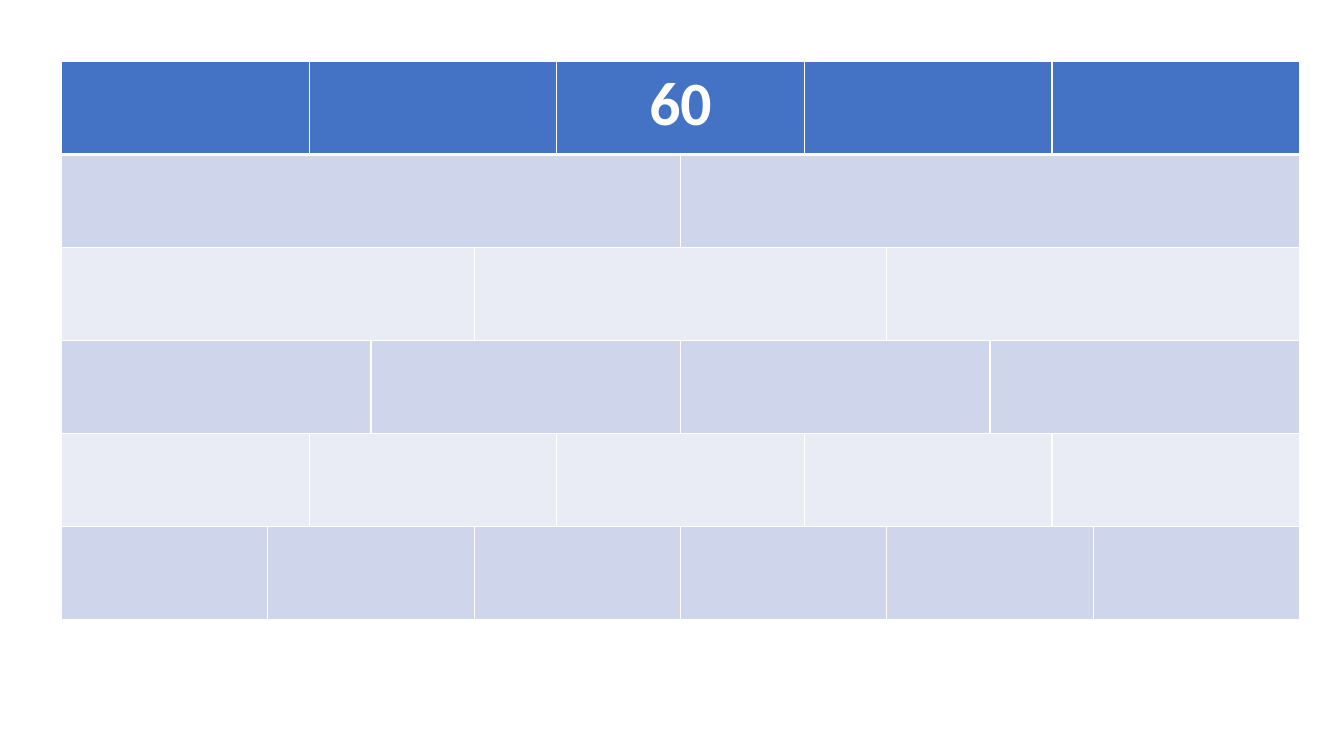
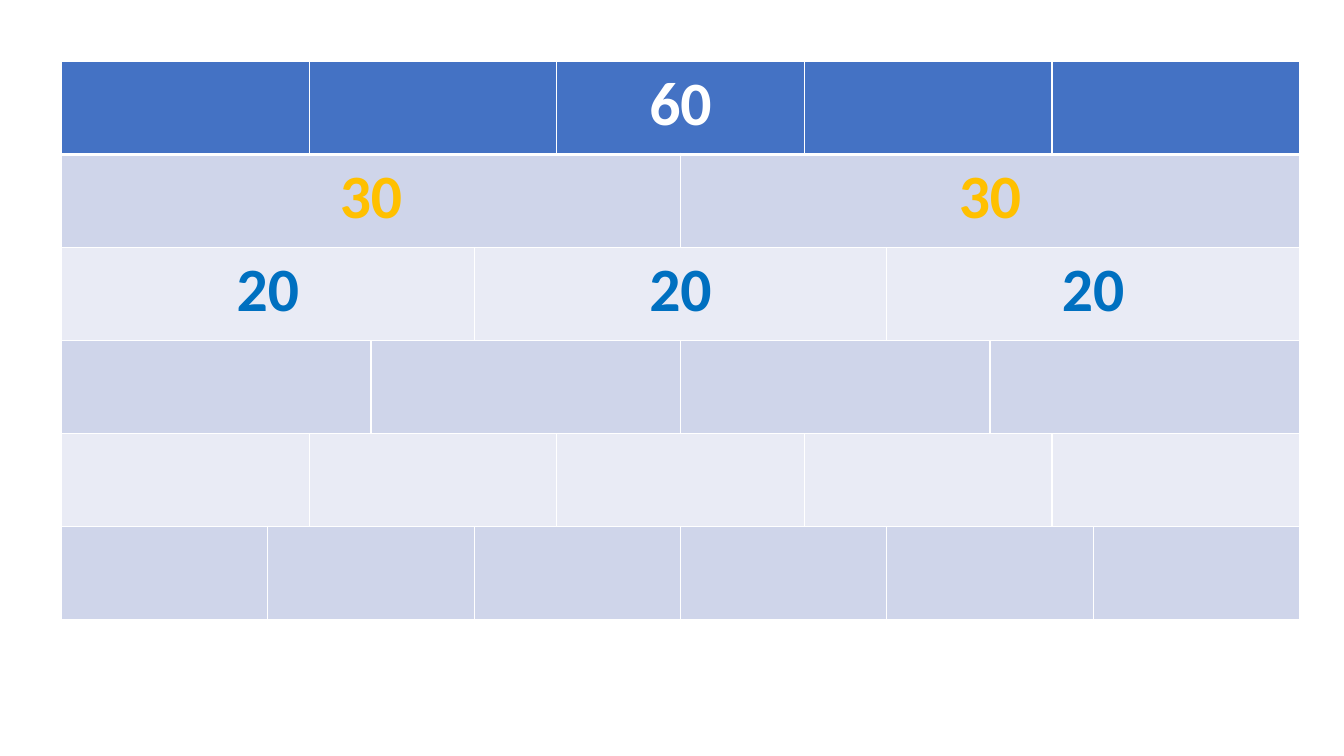
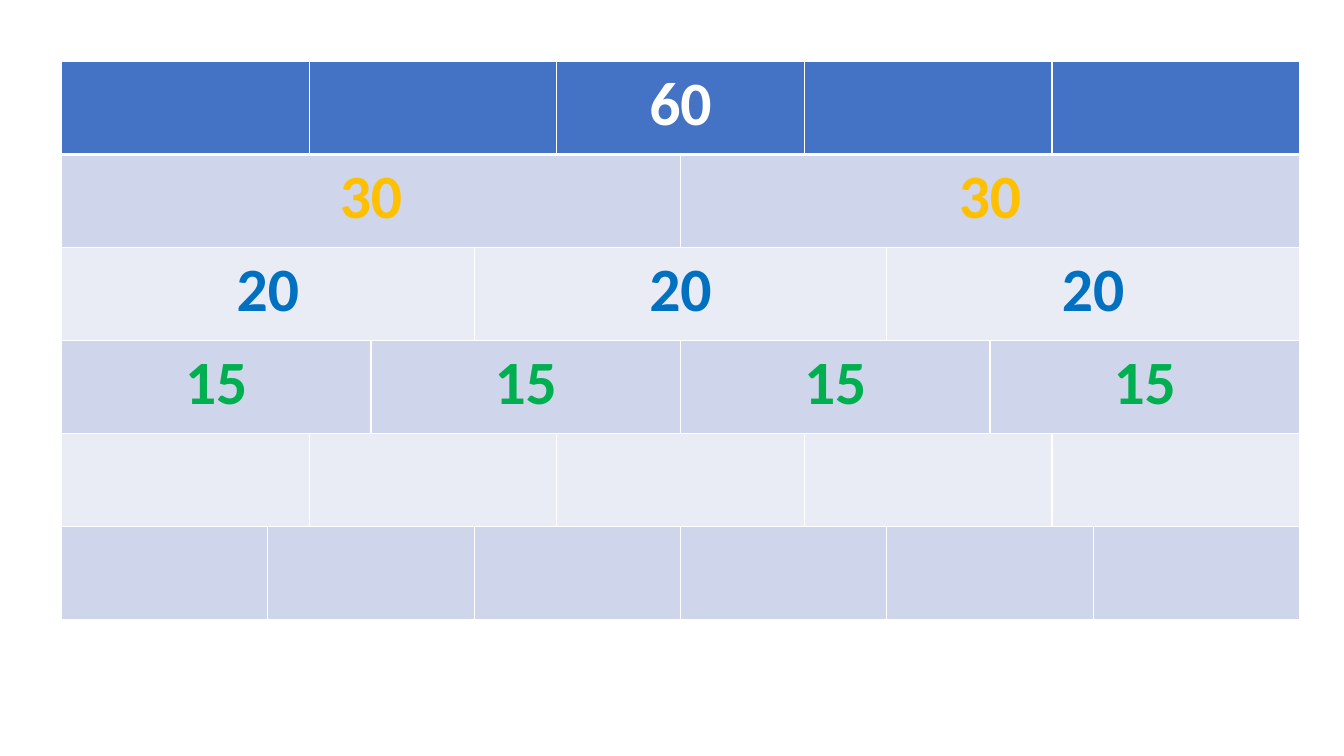
import dataclasses

import lxml.etree
import pptx
import pptx.dml.color
import pptx.enum.text
import pptx.oxml.ns
import pptx.slide
import pptx.table
import pptx.util

Cm = pptx.util.Cm
Pt = pptx.util.Pt
RGBColor = pptx.dml.color.RGBColor

WHITE = RGBColor(0xFF, 0xFF, 0xFF)
HEADER_BLUE = RGBColor(0x44, 0x72, 0xC4)
BAND_DARK = RGBColor(0xCF, 0xD5, 0xEA)
BAND_LIGHT = RGBColor(0xE9, 0xEB, 0xF5)
GOLD = RGBColor(0xFF, 0xC0, 0x00)
BLUE = RGBColor(0x00, 0x70, 0xC0)
GREEN = RGBColor(0x00, 0xB0, 0x50)

FONT_NAME = "Calibri"
FONT_SIZE = Pt(44)
TOTAL = 60
UNIT_WIDTH = Cm(0.52)
MARGIN = Cm(1.55)
TABLE_HEIGHT = Cm(14.07)
HEADER_BORDERS = {"lnL": Pt(1), "lnR": Pt(1), "lnT": Pt(1), "lnB": Pt(3)}


@dataclasses.dataclass(frozen=True)
class WallRow:
    """One row of the wall, cut into equal bricks."""

    labels: tuple[str, ...]
    fill: RGBColor
    text_color: RGBColor = WHITE

    def edges(self) -> list[int]:
        parts = len(self.labels)
        return [TOTAL * index // parts for index in range(parts + 1)]


HEADER = WallRow(("", "", "60", "", ""), HEADER_BLUE)
BODY_ROWS = (
    WallRow(("30",) * 2, BAND_DARK, GOLD),
    WallRow(("20",) * 3, BAND_LIGHT, BLUE),
    WallRow(("15",) * 4, BAND_DARK, GREEN),
    WallRow(("",) * 5, BAND_LIGHT),
    WallRow(("",) * 6, BAND_DARK),
)
LABELLED_ROWS_PER_SLIDE = (0, 2, 3)


def add_border(cell: pptx.table._Cell, side: str, width: int) -> None:
    properties = cell._tc.get_or_add_tcPr()
    qn = pptx.oxml.ns.qn
    line = lxml.etree.SubElement(properties, qn(f"a:{side}"), w=str(width))
    solid_fill = lxml.etree.SubElement(line, qn("a:solidFill"))
    lxml.etree.SubElement(solid_fill, qn("a:srgbClr"), val=str(WHITE))


def write_label(cell: pptx.table._Cell, label: str, color: RGBColor) -> None:
    paragraph = cell.text_frame.paragraphs[0]
    paragraph.text = label
    paragraph.alignment = pptx.enum.text.PP_ALIGN.CENTER
    for run in paragraph.runs:
        run.font.name = FONT_NAME
        run.font.size = FONT_SIZE
        run.font.bold = True
        run.font.color.rgb = color


def add_wall(slide: pptx.slide.Slide, labelled_rows: int) -> None:
    """Draw the wall with labels in the header and the first body rows."""
    rows = (HEADER, *BODY_ROWS)
    edges = sorted({edge for row in rows for edge in row.edges()})
    table = slide.shapes.add_table(
        len(rows), len(edges) - 1, MARGIN, MARGIN, TOTAL * UNIT_WIDTH, TABLE_HEIGHT
    ).table
    for column, start, end in zip(table.columns, edges, edges[1:]):
        column.width = (end - start) * UNIT_WIDTH

    for row_index, row in enumerate(rows):
        columns = [edges.index(edge) for edge in row.edges()]
        for label, first, after in zip(row.labels, columns, columns[1:]):
            cell = table.cell(row_index, first)
            if after - first > 1:
                cell.merge(table.cell(row_index, after - 1))
            if row is HEADER:
                for side, width in HEADER_BORDERS.items():
                    add_border(cell, side, width)
            cell.fill.solid()
            cell.fill.fore_color.rgb = row.fill
            if label and row_index <= labelled_rows:
                write_label(cell, label, row.text_color)


def main() -> None:
    presentation = pptx.Presentation()
    presentation.slide_width = Cm(33.87)
    presentation.slide_height = Cm(19.05)
    blank_layout = presentation.slide_layouts[6]
    for labelled_rows in LABELLED_ROWS_PER_SLIDE:
        add_wall(presentation.slides.add_slide(blank_layout), labelled_rows)
    presentation.save("out.pptx")


if __name__ == "__main__":
    main()
